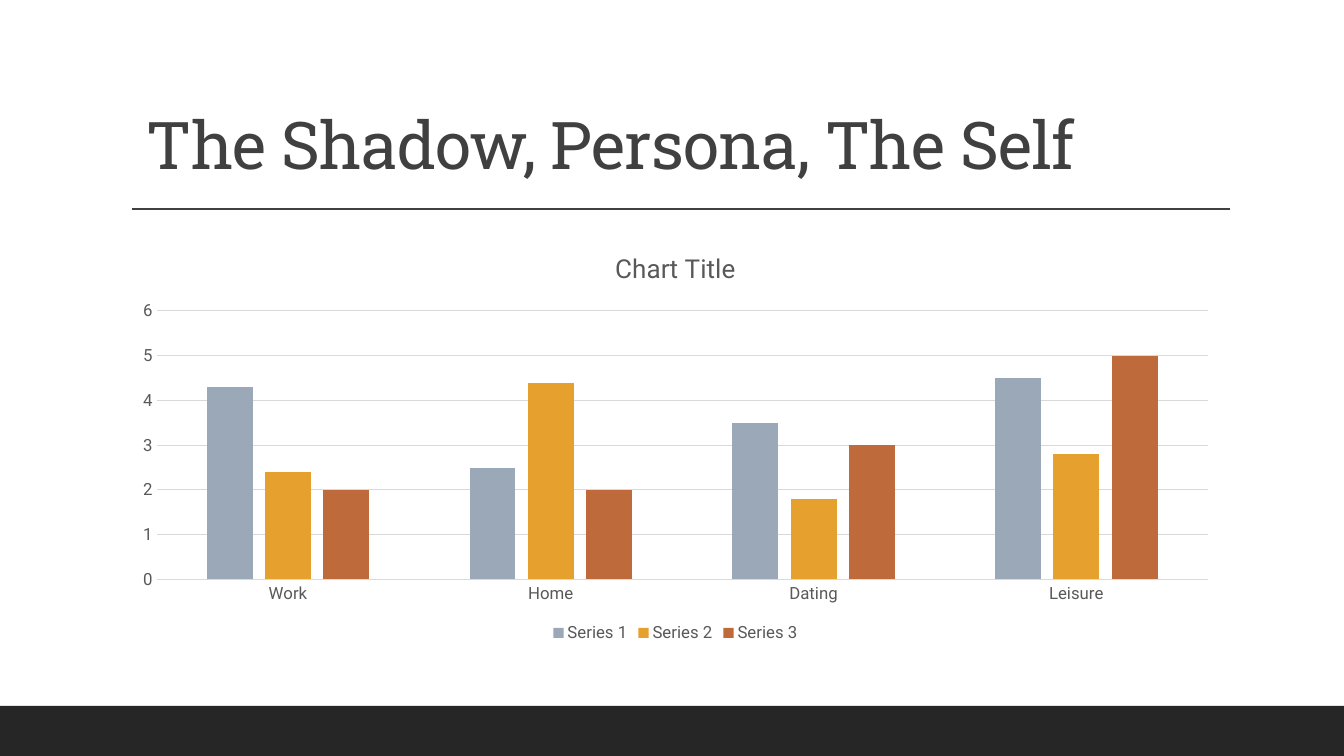
from lxml.etree import SubElement
from pptx import Presentation
from pptx.chart.data import CategoryChartData
from pptx.dml.color import RGBColor
from pptx.enum.chart import XL_CHART_TYPE, XL_LEGEND_POSITION, XL_TICK_MARK
from pptx.enum.shapes import MSO_CONNECTOR, MSO_SHAPE
from pptx.enum.text import MSO_ANCHOR
from pptx.oxml.ns import qn
from pptx.util import Pt

PX = 914400 / 100.8
WIDTH, HEIGHT = 1344, 756
COLORS = {
    "footer": "262626",
    "title": "404040",
    "label": "595959",
    "grid": "D9D9D9",
    "Series 1": "9BA8B7",
    "Series 2": "E6A02E",
    "Series 3": "BF6A3B",
}
CATEGORIES = ["Work", "Home", "Dating", "Leisure"]
SERIES = {
    "Series 1": (4.3, 2.5, 3.5, 4.5),
    "Series 2": (2.4, 4.4, 1.8, 2.8),
    "Series 3": (2, 2, 3, 5),
}


def color(name):
    return RGBColor.from_string(COLORS[name])


def emu(*lengths):
    return [round(length * PX) for length in lengths]


def style_font(font, face, size, color_name):
    font.name = face
    font.size = Pt(size)
    font.bold = False
    font.color.rgb = color(color_name)


def style_line(line, color_name, width):
    line.color.rgb = color(color_name)
    line.width = Pt(width)


def add_footer(page, box):
    bar = page.shapes.add_shape(MSO_SHAPE.RECTANGLE, *emu(*box))
    bar.shadow.inherit = False
    bar.fill.solid()
    bar.fill.fore_color.rgb = color("footer")
    bar.line.fill.background()


def add_heading(page, box):
    left, top, width, height = box
    heading = page.shapes.add_textbox(*emu(*box))
    frame = heading.text_frame
    frame.word_wrap = True
    frame.vertical_anchor = MSO_ANCHOR.BOTTOM
    frame.margin_left, frame.margin_bottom = emu(26, 5)
    para = frame.paragraphs[0]
    para.line_spacing = 0.9
    span = para.add_run()
    span.text = "The Shadow, Persona, The Self"
    style_font(span.font, "Roboto Slab", 47, "title")
    span.font._element.set("spc", "-50")

    rule_left, rule_top = left + 11, top + height + 20
    rule = page.shapes.add_connector(
        MSO_CONNECTOR.STRAIGHT,
        *emu(rule_left, rule_top, left + width, rule_top))
    style_line(rule.line, "title", 1)
    SubElement(rule._element.spPr, qn("a:effectLst"))


def style_axes(chart):
    for axis in (chart.category_axis, chart.value_axis):
        style_font(axis.tick_labels.font, "Roboto", 12, "label")
        axis.major_tick_mark = XL_TICK_MARK.NONE
        axis.minor_tick_mark = XL_TICK_MARK.NONE
    style_line(chart.category_axis.format.line, "grid", 0.75)
    values = chart.value_axis
    values.minimum_scale, values.maximum_scale, values.major_unit = 0, 6, 1
    values.format.line.fill.background()
    values.has_major_gridlines = True
    style_line(values.major_gridlines.format.line, "grid", 0.75)


def add_column_chart(page, box):
    data = CategoryChartData()
    data.categories = CATEGORIES
    for name, values in SERIES.items():
        data.add_series(name, values)
    chart = page.shapes.add_chart(
        XL_CHART_TYPE.COLUMN_CLUSTERED, *emu(*box), data).chart
    chart.font.name = "Roboto"
    chart.font.size = Pt(10)

    chart.has_title = True
    span = chart.chart_title.text_frame.paragraphs[0].add_run()
    span.text = "Chart Title"
    style_font(span.font, "Roboto", 18.6, "label")
    chart.chart_title.include_in_layout = False

    chart.has_legend = True
    chart.legend.position = XL_LEGEND_POSITION.BOTTOM
    chart.legend.include_in_layout = False
    style_font(chart.legend.font, "Roboto", 12, "label")

    style_axes(chart)
    plot = chart.plots[0]
    plot.gap_width = 219
    plot.overlap = -27
    plot.vary_by_categories = False
    for series in plot.series:
        series.invert_if_negative = False
        series.format.fill.solid()
        series.format.fill.fore_color.rgb = color(series.name)


def main():
    deck = Presentation()
    deck.slide_width, deck.slide_height = emu(WIDTH, HEIGHT)
    page = deck.slides.add_slide(deck.slide_layouts[6])
    add_footer(page, (0, 706, WIDTH, 50))
    add_heading(page, (121, 29, 1109, 160))
    add_column_chart(page, (121, 233, 1109, 414))
    deck.save("out.pptx")


if __name__ == "__main__":
    main()
